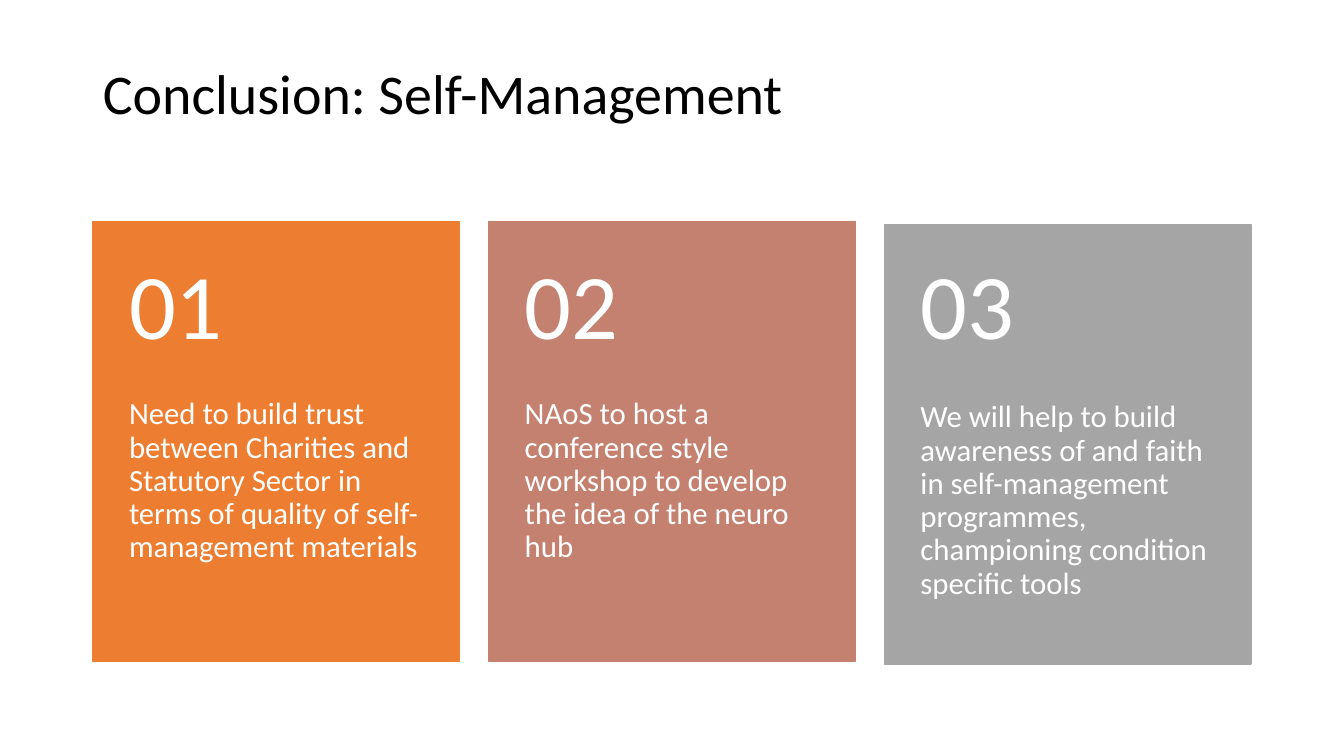
from dataclasses import dataclass

from pptx import Presentation
from pptx.dml.color import RGBColor
from pptx.enum.shapes import MSO_SHAPE as Shape
from pptx.enum.text import MSO_ANCHOR as Anchor, MSO_AUTO_SIZE as Fit, PP_ALIGN as Align
from pptx.slide import Slide
from pptx.text.text import TextFrame
from pptx.util import Inches, Pt

LEFT, TOP, SPAN = 0.92, 2.2, 11.49
WIDE, TALL, HEAD = 3.64, 4.36, 1.75
PAD = 0.36


@dataclass
class Card:
    text: str
    fill: str
    drop: float = 0


CARDS = [
    Card("Need to build trust between Charities and Statutory Sector in terms of "
         "quality of self-management materials", "ED7D31"),
    Card("NAoS to host a conference style workshop to develop the idea of the neuro hub",
         "C48170"),
    Card("We will help to build awareness of and faith in self-management programmes, "
         "championing condition specific tools", "A5A5A5", 0.03),
]


def color(code: str) -> RGBColor:
    return RGBColor.from_string(code)


def write(frame: TextFrame, text: str, size: float, code: str, anchor: Anchor) -> None:
    frame.word_wrap = True
    frame.auto_size = Fit.NONE
    frame.vertical_anchor = anchor
    frame.text = text
    para = frame.paragraphs[0]
    para.alignment = Align.LEFT
    para.line_spacing = 0.9
    font = para.runs[0].font
    font.name = "Calibri"
    font.size = Pt(size)
    font.color.rgb = color(code)


def label(slide: Slide, text: str, size: float, left: float, top: float, tall: float,
          pads: tuple[float, float], anchor: Anchor) -> None:
    box = slide.shapes.add_textbox(Inches(left), Inches(top), Inches(WIDE), Inches(tall))
    frame = box.text_frame
    frame.margin_left = frame.margin_right = Inches(PAD)
    frame.margin_top, frame.margin_bottom = (Inches(pad) for pad in pads)
    write(frame, text, size, "FFFFFF", anchor)


def draw(slide: Slide, card: Card, num: int, left: float) -> None:
    top = TOP + card.drop
    panel = slide.shapes.add_shape(
        Shape.RECTANGLE, Inches(left), Inches(top), Inches(WIDE), Inches(TALL))
    panel.shadow.inherit = False
    panel.fill.solid()
    panel.fill.fore_color.rgb = color(card.fill)
    panel.line.color.rgb = color(card.fill)
    panel.line.width = Pt(1)
    label(slide, card.text, 22, left, top + HEAD, TALL - HEAD, (0, PAD), Anchor.TOP)
    label(slide, f"{num:02}", 66, left, TOP, HEAD, (PAD / 2, PAD / 2), Anchor.MIDDLE)


def main() -> None:
    deck = Presentation()
    deck.slide_width, deck.slide_height = Inches(13.33), Inches(7.5)
    slide = deck.slides.add_slide(deck.slide_layouts[5])

    # Title
    title = slide.shapes.title
    title.left, title.top = Inches(LEFT), Inches(0.37)
    title.width, title.height = Inches(SPAN), Inches(1.18)
    write(title.text_frame, "Conclusion: Self-Management", 40, "000000", Anchor.MIDDLE)

    # Numbered cards, spread evenly under the title
    step = (SPAN - WIDE) / (len(CARDS) - 1)
    for i, card in enumerate(CARDS):
        draw(slide, card, i + 1, LEFT + i * step)

    deck.save("out.pptx")


if __name__ == "__main__":
    main()
